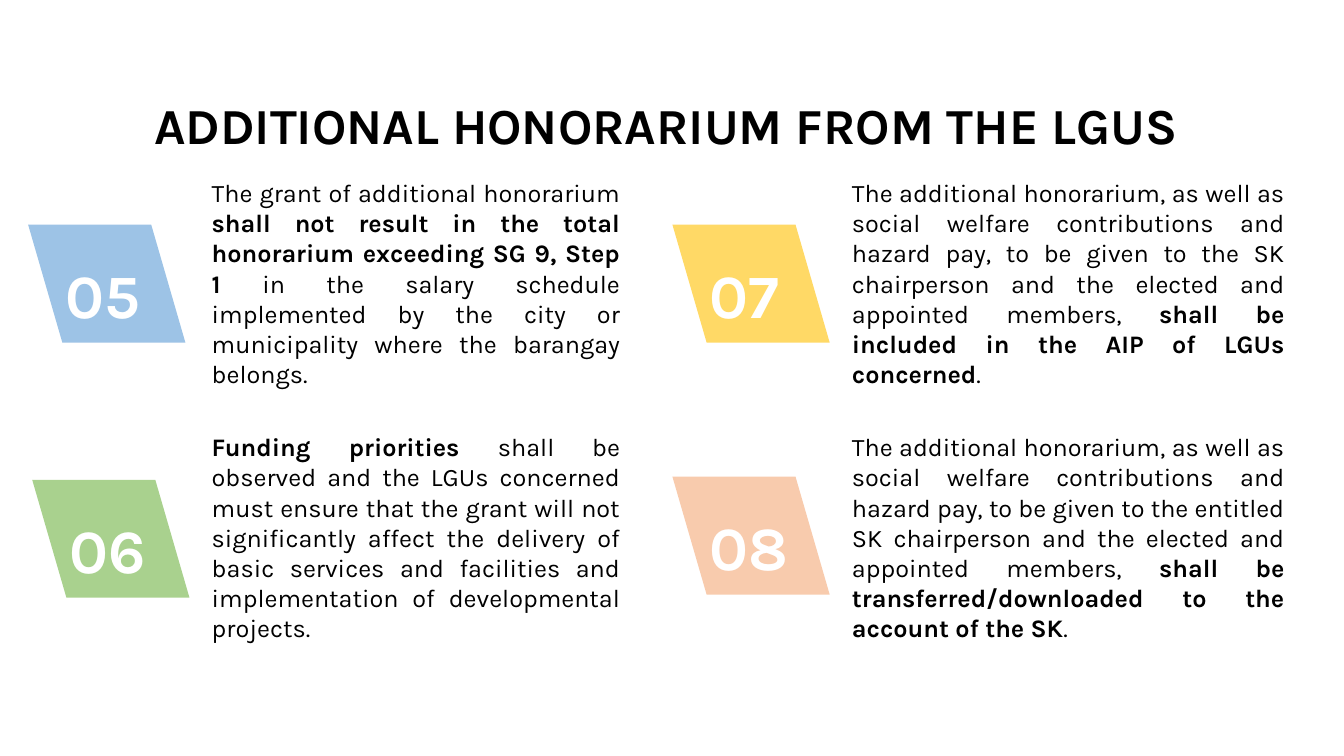
import pptx
import pptx.util
import pptx.dml.color
import pptx.enum.shapes
import pptx.enum.text
from dataclasses import dataclass

PX = 9144  # 100 px to the inch
ALIGN = pptx.enum.text.PP_ALIGN
ANCHOR = pptx.enum.text.MSO_ANCHOR


@dataclass(frozen=True)
class Theme:
    font: str = "Karla"
    ink: str = "000000"
    paper: str = "FFFFFF"
    blue: str = "9DC3E6"
    green: str = "A9D18E"
    yellow: str = "FFD966"
    peach: str = "F8CBAD"
    title_size: int = 36
    number_size: int = 44
    body_size: int = 18


THEME = Theme()
TITLE = "ADDITIONAL HONORARIUM FROM THE LGUS "
SK_PAY = ("The additional honorarium, as well as social welfare contributions and "
          "hazard pay, to be given to the {}SK chairperson and the elected and "
          "appointed members, ")

# Number, badge colour, badge left and top, text box, runs as (text, bold)
PROVISIONS = [
    ("05", THEME.blue, (28, 223), (210, 171, 405, 222), [
        ("The grant of additional honorarium ", False),
        ("shall not result in the total honorarium exceeding SG 9, Step 1 ", True),
        ("in the salary schedule implemented by the city or municipality "
         "where the barangay belongs.", False)]),
    ("06", THEME.green, (32, 476), (210, 423, 405, 222), [
        ("Funding priorities ", True),
        ("shall be observed and the LGUs concerned must ensure that the grant will "
         "not significantly affect the delivery of basic services and facilities "
         "and implementation of developmental projects.", False)]),
    ("07", THEME.yellow, (667, 223), (845, 171, 429, 222), [
        (SK_PAY.format(""), False),
        ("shall be included in the AIP of LGUs concerned", True),
        (".", False)]),
    ("08", THEME.peach, (667, 473), (845, 423, 429, 222), [
        (SK_PAY.format("entitled "), False),
        ("shall be transferred/downloaded to the account of the SK", True),
        (".", False)]),
]


def emu(*lengths):
    return [pptx.util.Emu(length * PX) for length in lengths]


def rgb(value):
    return pptx.dml.color.RGBColor.from_string(value)


def write(frame, runs, *, size, color=THEME.ink, align=ALIGN.LEFT,
          anchor=ANCHOR.TOP, insets=(0, 5, 0, 5)):
    frame.word_wrap = True
    frame.vertical_anchor = anchor
    (frame.margin_left, frame.margin_top,
     frame.margin_right, frame.margin_bottom) = emu(*insets)
    paragraph = frame.paragraphs[0]
    paragraph.alignment = align
    for text, bold in runs:
        run = paragraph.add_run()
        run.text = text
        run.font.name = THEME.font
        run.font.size = pptx.util.Pt(size)
        run.font.bold = bold
        run.font.color.rgb = rgb(color)


def add_title(slide, box):
    title = slide.shapes.add_textbox(*emu(*box))
    write(title.text_frame, [(TITLE, True)], size=THEME.title_size,
          align=ALIGN.CENTER, anchor=ANCHOR.MIDDLE, insets=(7, 4, 7, 4))


def add_badge(slide, box, number, color):
    badge = slide.shapes.add_shape(
        pptx.enum.shapes.MSO_SHAPE.PARALLELOGRAM, *emu(*box))
    badge.adjustments[0] = 0.29
    badge._element.spPr.find(pptx.oxml.ns.qn("a:xfrm")).set("flipH", "1")
    badge.shadow.inherit = False
    badge.fill.solid()
    badge.fill.fore_color.rgb = rgb(color)
    badge.line.fill.background()
    write(badge.text_frame, [(number, True)], size=THEME.number_size,
          color=THEME.paper, anchor=ANCHOR.BOTTOM, insets=(10, 85, 10, 5))


def add_provision(slide, box, runs):
    provision = slide.shapes.add_textbox(*emu(*box))
    write(provision.text_frame, runs, size=THEME.body_size, align=ALIGN.JUSTIFY)
    provision.text_frame.auto_size = pptx.enum.text.MSO_AUTO_SIZE.SHAPE_TO_FIT_TEXT


def main():
    deck = pptx.Presentation()
    deck.slide_width, deck.slide_height = emu(1333, 750)
    slide = deck.slides.add_slide(deck.slide_layouts[6])
    slide.background.fill.solid()
    slide.background.fill.fore_color.rgb = rgb(THEME.paper)

    # Heading
    add_title(slide, (17, 55, 1300, 136))

    # Numbered provisions
    for number, color, corner, text_box, runs in PROVISIONS:
        add_badge(slide, (*corner, 156, 117), number, color)
        add_provision(slide, text_box, runs)

    deck.save("out.pptx")


if __name__ == "__main__":
    main()
